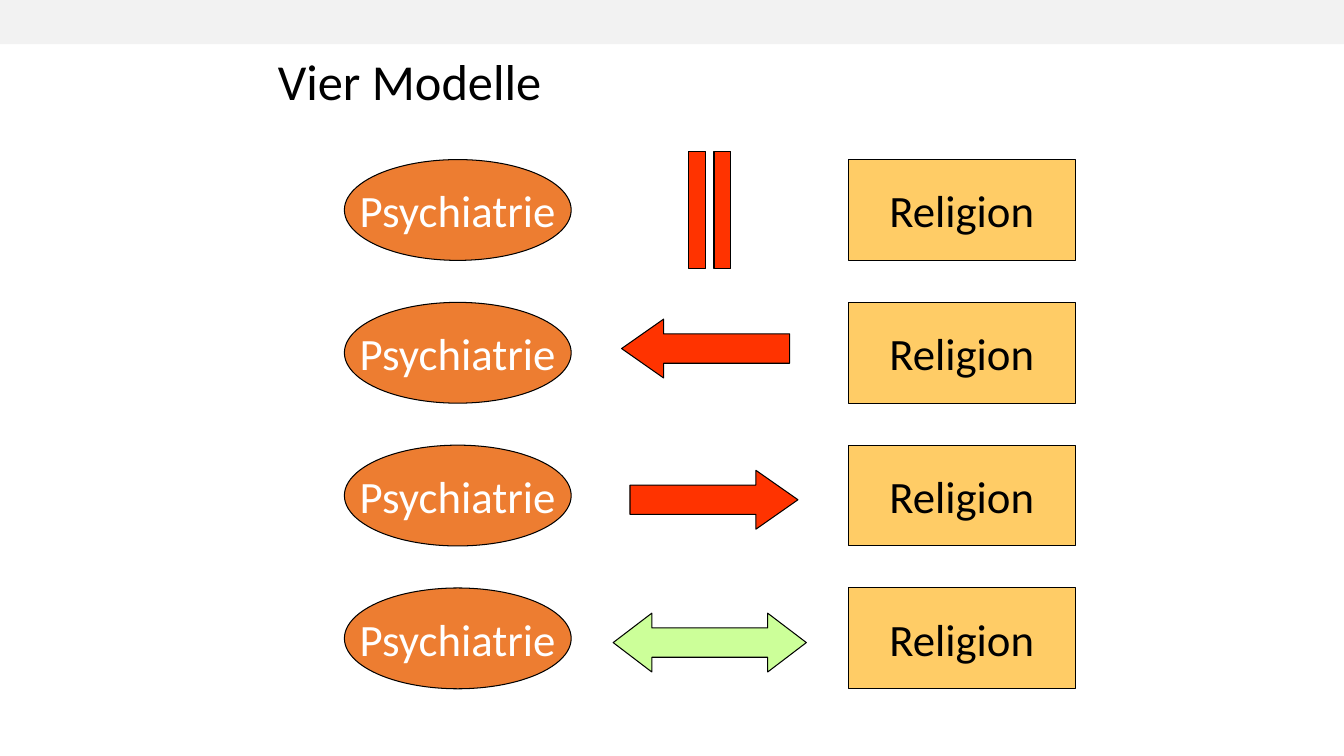
from pptx import Presentation
from pptx import util as u
from pptx.dml.color import RGBColor
from pptx.enum import shapes, text

SCALE = 9525
SHAPE = shapes.MSO_SHAPE
FONT = "Calibri"
BLACK, WHITE, GREY = "000000", "FFFFFF", "F2F2F2"
ORANGE, YELLOW, RED, GREEN = "ED7D31", "FFCC66", "FF3300", "CCFF99"

ROW_PITCH = 136
MODELS = [
    ("separate", (656, -8, 64, 112)),
    ("left", (592, 16, 160, 56)),
    ("right", (600, 24, 160, 56)),
    ("both", (584, 24, 184, 56)),
]
ARROWS = {
    "left": (SHAPE.LEFT_ARROW, RED, 0.714),
    "right": (SHAPE.RIGHT_ARROW, RED, 0.714),
    "both": (SHAPE.LEFT_RIGHT_ARROW, GREEN, 0.657),
}


def px(value):
    return u.Emu(value * SCALE)


def color(value):
    return RGBColor.from_string(value)


def write(shape, content, size, font_color, align, anchor, fit=text.MSO_AUTO_SIZE.NONE):
    frame = shape.text_frame
    frame.text = content
    frame.word_wrap = False
    frame.auto_size = fit
    frame.vertical_anchor = anchor
    paragraph = frame.paragraphs[0]
    paragraph.alignment = align
    font = paragraph.runs[0].font
    font.name = FONT
    font.size = u.Pt(size)
    font.color.rgb = color(font_color)


def add_figure(container, kind, box, fill, line=BLACK):
    shape = container.shapes.add_shape(kind, *map(px, box))
    shape.shadow.inherit = False
    shape.fill.solid()
    shape.fill.fore_color.rgb = color(fill)
    if line:
        shape.line.color.rgb = color(line)
        shape.line.width = u.Pt(0.75)
    else:
        shape.line.fill.background()
    return shape


def add_header(slide, box):
    left, top, width, height = box
    add_figure(slide, SHAPE.RECTANGLE, (left, top, width, height), GREY, line=None)
    title = slide.shapes.title
    title.left, title.top = px(left + 255), px(top + height + 1)
    title.width, title.height = px(281), px(68)
    write(title, "Vier Modelle", 36, BLACK, text.PP_ALIGN.LEFT,
          text.MSO_ANCHOR.TOP, text.MSO_AUTO_SIZE.SHAPE_TO_FIT_TEXT)


def add_barrier(slide, box):
    left, top, width, height = box
    bar_width = 16
    barrier = slide.shapes.add_group_shape()
    for bar in range(2):
        bar_left = left + bar * 24
        add_figure(barrier, SHAPE.RECTANGLE, (bar_left, top, bar_width, height), RED)


def add_relation(slide, relation, box):
    if relation == "separate":
        add_barrier(slide, box)
        return
    kind, fill, head = ARROWS[relation]
    arrow = add_figure(slide, kind, box, fill)
    arrow.adjustments[0] = 0.5
    arrow.adjustments[1] = head


def add_model(slide, box, relation, relation_box):
    left, top, width, height = box
    side_width = 216
    sides = [
        (SHAPE.OVAL, left, "Psychiatrie", ORANGE, WHITE),
        (SHAPE.RECTANGLE, left + width - side_width, "Religion", YELLOW, BLACK),
    ]
    for kind, side_left, label, fill, font_color in sides:
        side = add_figure(slide, kind, (side_left, top, side_width, height), fill)
        write(side, label, 32, font_color, text.PP_ALIGN.CENTER, text.MSO_ANCHOR.MIDDLE)
    relation_left, offset, relation_width, relation_height = relation_box
    add_relation(slide, relation,
                 (relation_left, top + offset, relation_width, relation_height))


def main():
    presentation = Presentation()
    presentation.slide_width, presentation.slide_height = px(1280), px(720)
    slide = presentation.slides.add_slide(presentation.slide_layouts[5])
    add_header(slide, (0, 0, 1280, 42))
    for row, (relation, relation_box) in enumerate(MODELS):
        add_model(slide, (328, 152 + row * ROW_PITCH, 696, 96), relation, relation_box)
    presentation.save("out.pptx")


if __name__ == "__main__":
    main()
